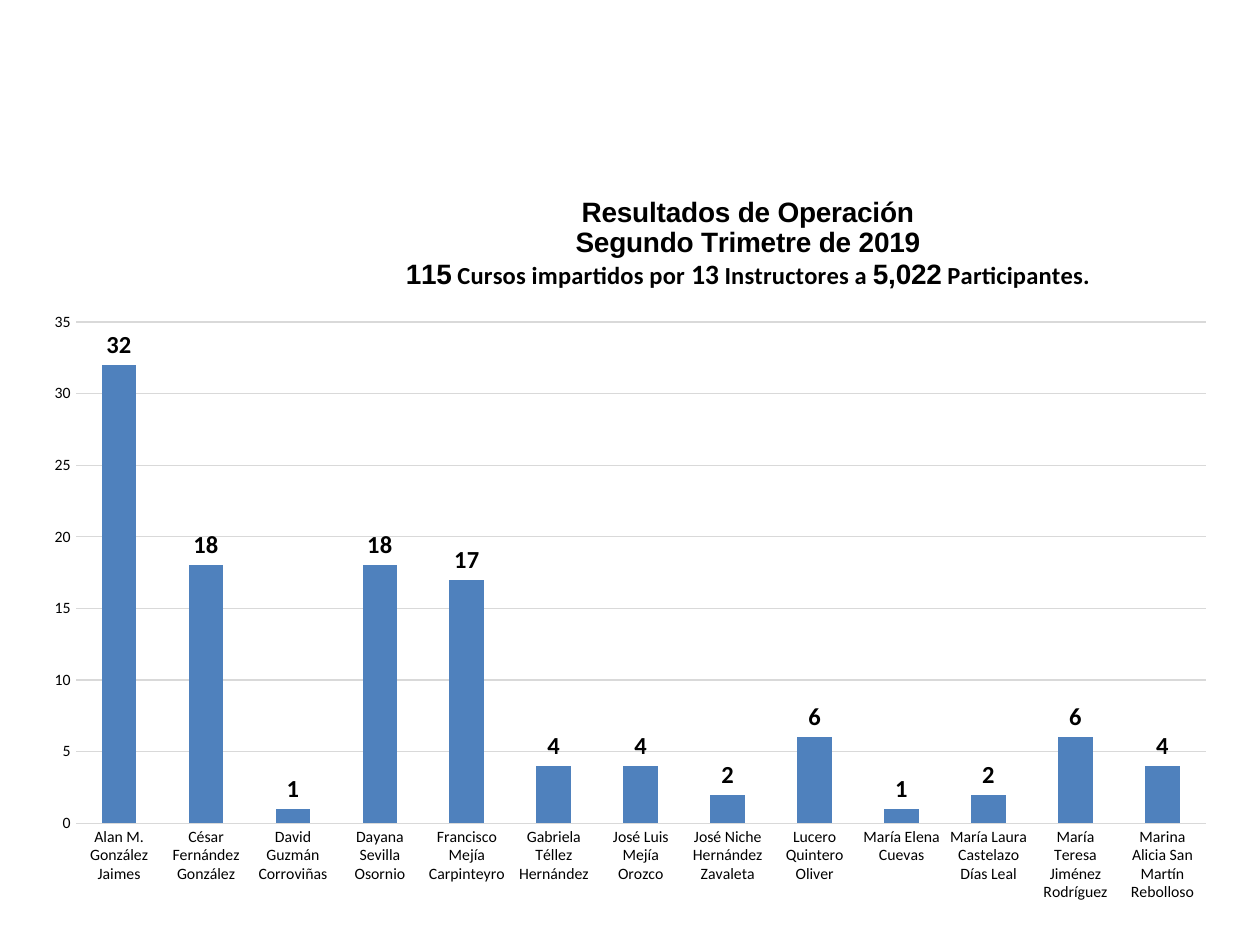
"""Builds a slide with a column chart of courses given by each instructor."""
from lxml import etree
from pptx import Presentation
from pptx import util as u
from pptx.chart.data import CategoryChartData
from pptx.dml.color import RGBColor
from pptx.enum import chart as ch, text
from pptx.oxml.ns import qn

PX = 914400 // 126
COLORS = {"text": "000000", "bar": "4F81BD", "grid": "D9D9D9"}
COURSES = {
    "Alan M. González Jaimes": 32,
    "César Fernández González": 18,
    "David Guzmán Corroviñas": 1,
    "Dayana Sevilla Osornio": 18,
    "Francisco Mejía Carpinteyro": 17,
    "Gabriela Téllez Hernández": 4,
    "José Luis Mejía Orozco": 4,
    "José Niche Hernández Zavaleta": 2,
    "Lucero Quintero Oliver": 6,
    "María Elena Cuevas": 1,
    "María Laura Castelazo Días Leal": 2,
    "María Teresa Jiménez Rodríguez": 6,
    "Marina Alicia San Martín Rebolloso": 4,
}
BIG = {"font": "Arial", "size": 16}
SMALL = {"font": "Calibri", "size": 14}
TITLE = [
    [("Resultados de Operación", BIG)],
    [("Segundo Trimetre de 2019", BIG)],
    [("115", BIG), (" Cursos impartidos por ", SMALL),
     ("13", {"font": "Calibri", "size": 16}), (" Instructores a ", SMALL),
     ("5,022", BIG), (" Participantes.", SMALL)],
]


def rgb(name):
    return RGBColor.from_string(COLORS[name])


def style_font(f, font="Calibri", size=10, bold=False, color="text"):
    f.name, f.size, f.bold = font, u.Pt(size), bold
    f.color.rgb = rgb(color)


def add_text(p, content, **style):
    r = p.add_run()
    r.text = content
    style_font(r.font, **style)


def set_layout(parent, index, **values):
    for old in parent.findall(qn("c:layout")):
        parent.remove(old)
    layout = etree.Element(qn("c:layout"))
    manual = etree.SubElement(layout, qn("c:manualLayout"))
    for tag, value in values.items():
        etree.SubElement(manual, qn(f"c:{tag}")).set("val", str(value))
    parent.insert(index, layout)


class Deck:
    def __init__(self, width, height):
        self.prs = Presentation()
        self.prs.slide_width, self.prs.slide_height = width * PX, height * PX
        self.slide = self.prs.slides.add_slide(self.prs.slide_layouts[6])

    def column_chart(self, values, x, y, w, h):
        data = CategoryChartData()
        data.categories = list(values)
        data.add_series("Series 1", list(values.values()))
        chart = self.slide.shapes.add_chart(
            ch.XL_CHART_TYPE.COLUMN_CLUSTERED,
            x * PX, y * PX, w * PX, h * PX, data).chart
        chart.has_legend = False
        style_font(chart.font)
        plot = chart.plots[0]
        plot.gap_width, plot.vary_by_categories = 150, False
        fill = plot.series[0].format.fill
        fill.solid()
        fill.fore_color.rgb = rgb("bar")
        plot.has_data_labels = True
        labels = plot.data_labels
        labels.show_value = True
        labels.position = ch.XL_LABEL_POSITION.OUTSIDE_END
        style_font(labels.font, size=14, bold=True)
        for axis in (chart.category_axis, chart.value_axis):
            axis.major_tick_mark = axis.minor_tick_mark = ch.XL_TICK_MARK.NONE
            axis.format.line.fill.background()
            style_font(axis.tick_labels.font, size=9)
        axis = chart.value_axis
        axis.minimum_scale, axis.maximum_scale, axis.major_unit = 0, 35, 5
        grid = axis.major_gridlines.format.line
        grid.color.rgb, grid.width = rgb("grid"), u.Pt(0.75)
        area = chart.plots[0]._element.getparent()
        set_layout(area, 0, layoutTarget="inner", xMode="edge", yMode="edge",
                   x=0.038, y=0.205, w=0.942, h=0.671)
        return chart

    def chart_title(self, chart, lines):
        chart.has_title = True
        title = chart.chart_title
        tf = title.text_frame
        for i, runs in enumerate(lines):
            p = tf.add_paragraph() if i else tf.paragraphs[0]
            p.alignment = text.PP_ALIGN.CENTER
            style_font(p.font, bold=True, **BIG)
            for content, style in runs:
                add_text(p, content, bold=True, **style)
        set_layout(title._element, 1, xMode="edge", yMode="edge", x=0.31, y=0.03)


def main():
    deck = Deck(1260, 945)
    chart = deck.column_chart(COURSES, 30, 169, 1200, 747)
    deck.chart_title(chart, TITLE)
    deck.prs.save("out.pptx")


if __name__ == "__main__":
    main()
